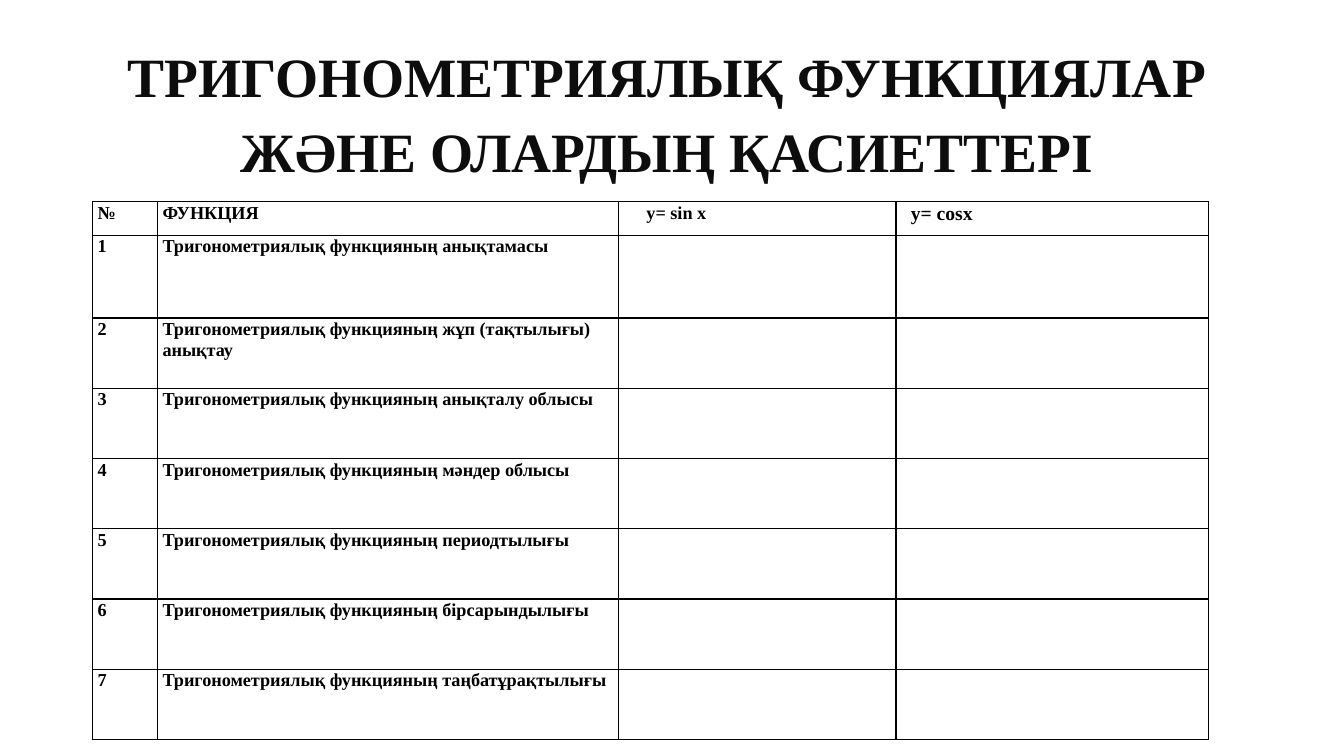
import pptx
import pptx.dml.color
import pptx.enum.text
import pptx.oxml
import pptx.oxml.ns
import pptx.util

Pt = pptx.util.Pt

# Content
TITLE = "ТРИГОНОМЕТРИЯЛЫҚ ФУНКЦИЯЛАР ЖӘНЕ ОЛАРДЫҢ ҚАСИЕТТЕРІ"
HEADINGS = ["№", "ФУНКЦИЯ", "у= sin х", "у= cosx"]
PROPERTIES = [
    "анықтамасы",
    "жұп (тақтылығы) анықтау",
    "анықталу облысы",
    "мәндер облысы",
    "периодтылығы",
    "бірсарындылығы",
    "таңбатұрақтылығы",
]
ROWS = [HEADINGS] + [
    [str(number), f"Тригонометриялық функцияның {name}", "", ""]
    for number, name in enumerate(PROPERTIES, 1)
]

# Layout, in points
SLIDE_SIZE = (960, 540)
TITLE_BOX = (59, 67, 835, 66.2)
TABLE_LEFT, TABLE_TOP = 66.2, 144
COLUMN_WIDTHS = [46.3, 329.5, 198, 223.4]
ROW_HEIGHTS = [24, 59.2] + [50.2] * (len(PROPERTIES) - 1)
CELL_INSET = 3.6
HEADING_INSETS = [CELL_INSET, CELL_INSET, 19.8, 10.6]
HEADING_SIZES = [13, 13, 13, 14]

# Format
FONT = "Times New Roman"
TITLE_COLOR = pptx.dml.color.RGBColor(0x0D, 0x0D, 0x0D)
BLACK = pptx.dml.color.RGBColor(0, 0, 0)
ALIGN = pptx.enum.text.PP_ALIGN


def set_values(target, values):
    for name, value in values.items():
        setattr(target, name, value)


def write_text(frame, text, size, color, align, spacing):
    paragraph = frame.paragraphs[0]
    set_values(paragraph, {"alignment": align, "line_spacing": spacing})
    run = paragraph.add_run()
    run.text = text
    set_values(run.font, {"name": FONT, "size": Pt(size), "bold": True})
    run.font.color.rgb = color


def add_borders(cell):
    properties = cell._tc.get_or_add_tcPr()
    for position, side in enumerate(("lnL", "lnR", "lnT", "lnB")):
        border = pptx.oxml.parse_xml(
            f'<a:{side} {pptx.oxml.ns.nsdecls("a")} w="{Pt(1)}"><a:solidFill>'
            f'<a:srgbClr val="{BLACK}"/></a:solidFill></a:{side}>'
        )
        properties.insert(position, border)


def add_title(slide):
    shape = slide.shapes.add_textbox(*map(Pt, TITLE_BOX))
    set_values(shape.text_frame, {
        "word_wrap": True,
        "vertical_anchor": pptx.enum.text.MSO_ANCHOR.BOTTOM,
        "margin_top": 0,
        "margin_bottom": Pt(2.3),
    })
    write_text(shape.text_frame, TITLE, 39.6, TITLE_COLOR, ALIGN.CENTER, 1.13)


def add_property_table(slide):
    shape = slide.shapes.add_table(
        len(ROWS), len(HEADINGS), Pt(TABLE_LEFT), Pt(TABLE_TOP),
        Pt(sum(COLUMN_WIDTHS)), Pt(sum(ROW_HEIGHTS)),
    )
    table = shape.table
    set_values(table, {"first_row": False, "horz_banding": False})
    for column, width in zip(table.columns, COLUMN_WIDTHS):
        column.width = Pt(width)
    for row, height in zip(table.rows, ROW_HEIGHTS):
        row.height = Pt(height)

    for row_index, texts in enumerate(ROWS):
        for column_index, text in enumerate(texts):
            cell = table.cell(row_index, column_index)
            is_heading = row_index == 0
            inset = HEADING_INSETS[column_index] if is_heading else CELL_INSET
            size = HEADING_SIZES[column_index] if is_heading else 13
            set_values(cell, {
                "margin_left": Pt(inset),
                "margin_right": Pt(CELL_INSET),
                "margin_top": 0,
                "margin_bottom": 0,
            })
            cell.fill.background()
            add_borders(cell)
            if text:
                write_text(cell.text_frame, text, size, BLACK, ALIGN.LEFT, 1.07)


def main():
    presentation = pptx.Presentation()
    width, height = map(Pt, SLIDE_SIZE)
    set_values(presentation, {"slide_width": width, "slide_height": height})
    slide = presentation.slides.add_slide(presentation.slide_layouts[6])
    add_title(slide)
    add_property_table(slide)
    presentation.save("out.pptx")


if __name__ == "__main__":
    main()
